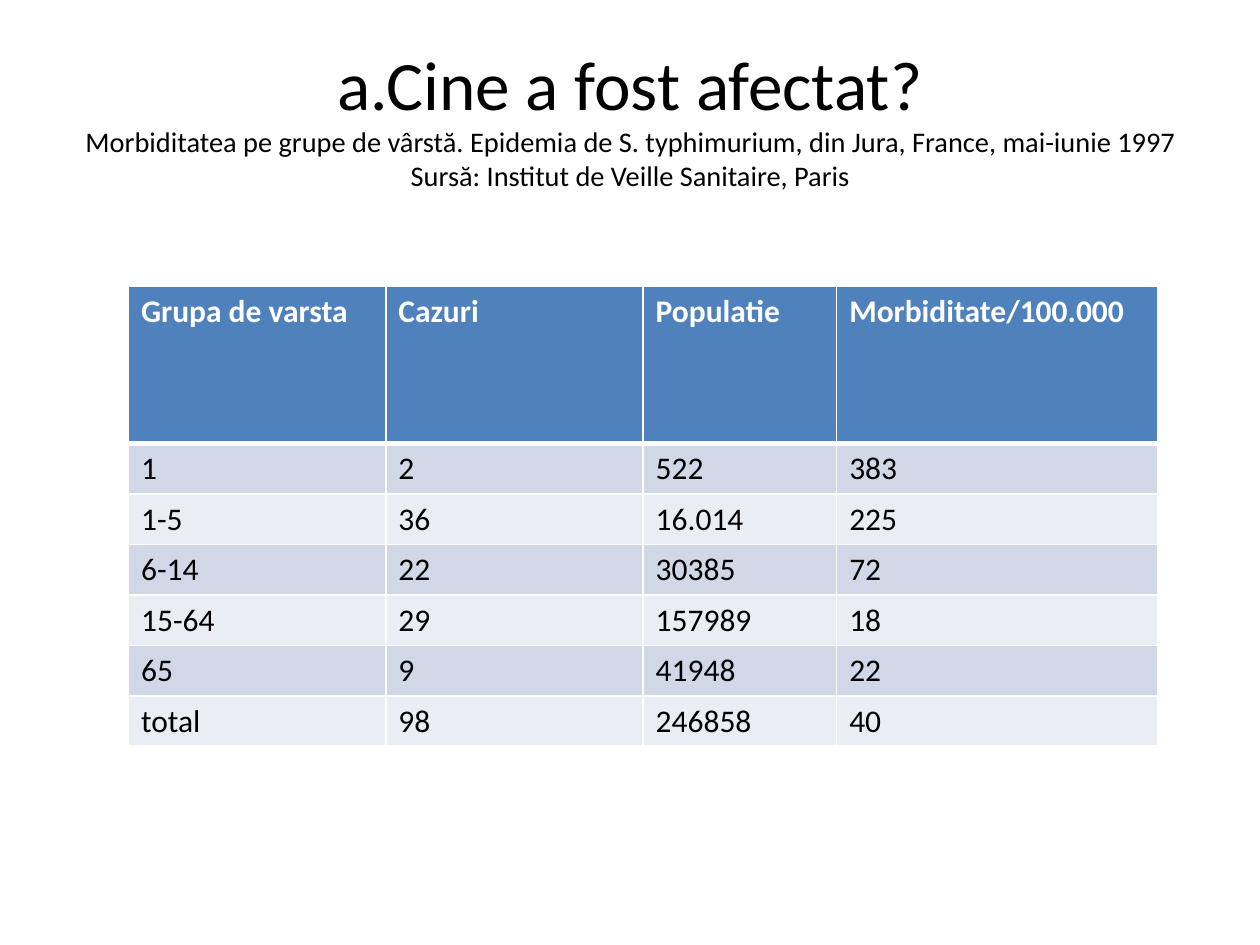
from lxml import etree
from pptx import Presentation
from pptx.dml.color import RGBColor
from pptx.enum.text import MSO_ANCHOR, PP_ALIGN
from pptx.oxml.ns import qn
from pptx.util import Inches, Pt

CENTER = PP_ALIGN.CENTER
MIDDLE = MSO_ANCHOR.MIDDLE
BLANK_LAYOUT = 6

FONT = "Calibri"
BLACK, WHITE = "000000", "FFFFFF"
HEADER_FILL = "4F81BD"
BAND_FILLS = ("D0D8E8", "E9EDF4")

COLUMN_SHARES = (0.25, 0.25, 0.188, 0.312)
HEADER_HEIGHT = 1.25
HEADERS = ("Grupa de varsta", "Cazuri", "Populatie", "Morbiditate/100.000")
AGE_GROUPS = (
    ("1", "2", "522", "383"),
    ("1-5", "36", "16.014", "225"),
    ("6-14", "22", "30385", "72"),
    ("15-64", "29", "157989", "18"),
    ("65", "9", "41948", "22"),
    ("total", "98", "246858", "40"),
)


def color(value):
    return RGBColor.from_string(value)


def add_text(para, text, size=18, fill=BLACK, bold=False):
    span = para.add_run()
    span.text = text
    span.font.name = FONT
    span.font.size = Pt(size)
    span.font.bold = bold
    span.font.color.rgb = color(fill)


def add_title(page, left, top, width, height):
    box = page.shapes.add_textbox(Inches(left), Inches(top), Inches(width), Inches(height))
    frame = box.text_frame
    frame.word_wrap = True
    frame.vertical_anchor = MIDDLE
    para = frame.paragraphs[0]
    para.alignment = CENTER
    add_text(para, "a.Cine a fost afectat?", size=39.6)
    para.add_line_break()
    add_text(para, "Morbiditatea pe grupe de vârstă. Epidemia de S. typhimurium, din Jura, "
                   "France, mai-iunie 1997 Sursă: Institut de Veille Sanitaire, Paris", size=16.2)


def add_border(cell, side, width):
    properties = cell._tc.get_or_add_tcPr()
    line = etree.SubElement(properties, qn(f"a:ln{side}"), w=str(Pt(width)))
    solid = etree.SubElement(line, qn("a:solidFill"))
    etree.SubElement(solid, qn("a:srgbClr"), val=WHITE)


def format_cell(cell, text, fill, text_fill=BLACK, bold=False, top=1, bottom=1):
    add_text(cell.text_frame.paragraphs[0], text, fill=text_fill, bold=bold)
    # The schema wants the borders in this order, ahead of the fill.
    for side, width in (("L", 1), ("R", 1), ("T", top), ("B", bottom)):
        add_border(cell, side, width)
    cell.fill.solid()
    cell.fill.fore_color.rgb = color(fill)


def add_morbidity_table(page, left, top, width, height):
    frame = page.shapes.add_table(len(AGE_GROUPS) + 1, len(HEADERS),
                                  Inches(left), Inches(top), Inches(width), Inches(height))
    table = frame.table
    for column, share in zip(table.columns, COLUMN_SHARES):
        column.width = Inches(width * share)
    header_row, *body_rows = table.rows
    header_row.height = Inches(HEADER_HEIGHT)
    for cell, text in zip(header_row.cells, HEADERS):
        format_cell(cell, text, HEADER_FILL, text_fill=WHITE, bold=True, bottom=3)
    for index, (row, values) in enumerate(zip(body_rows, AGE_GROUPS)):
        row.height = Inches((height - HEADER_HEIGHT) / len(AGE_GROUPS))
        for cell, text in zip(row.cells, values):
            format_cell(cell, text, BAND_FILLS[index % 2], top=3 if index == 0 else 1)


def main():
    deck = Presentation()
    deck.slide_width, deck.slide_height = Inches(10), Inches(7.5)
    page = deck.slides.add_slide(deck.slide_layouts[BLANK_LAYOUT])
    add_title(page, 0.5, 0.3, 9, 1.25)
    add_morbidity_table(page, 1.02, 2.27, 8.17, 3.65)
    deck.save("out.pptx")


if __name__ == "__main__":
    main()
